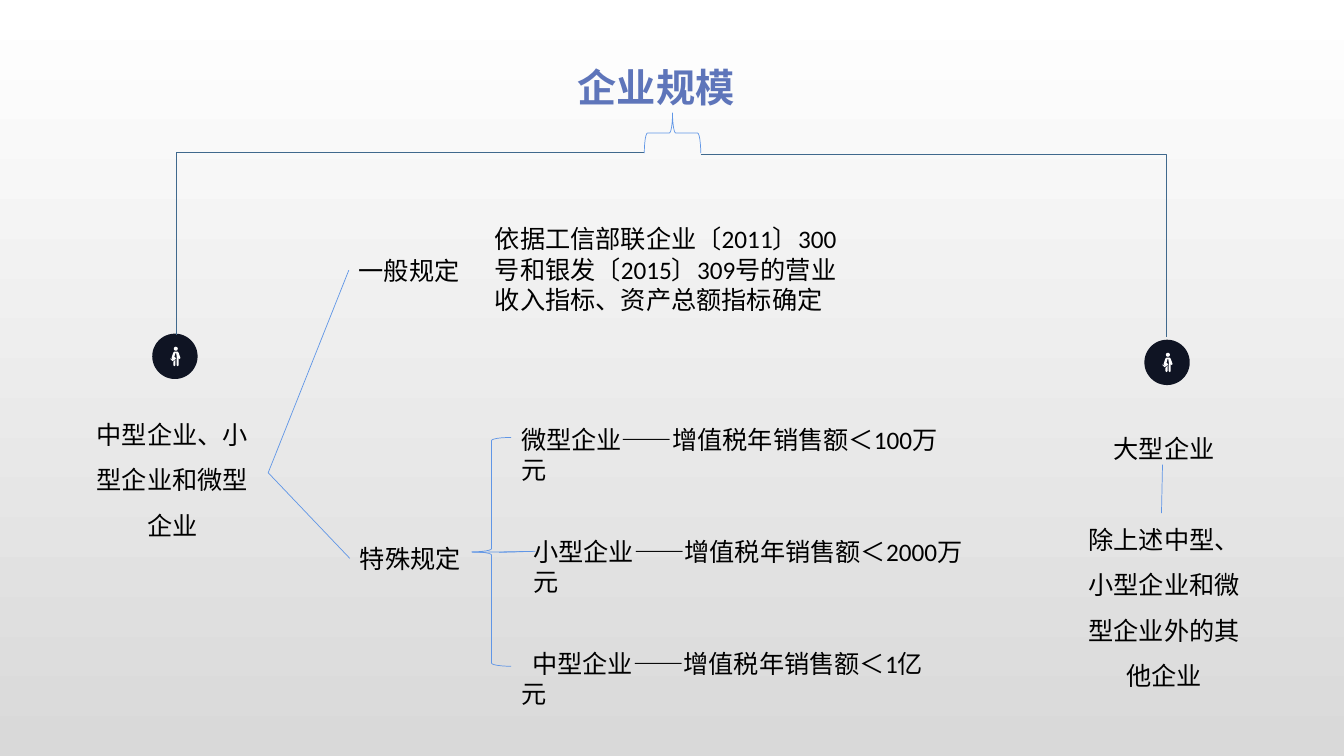
from math import cos, pi, sin

from lxml.etree import SubElement
from pptx import Presentation
from pptx.dml.color import RGBColor
from pptx.enum.shapes import MSO_CONNECTOR as LINK, MSO_SHAPE as SHAPE
from pptx.enum.text import MSO_ANCHOR as ANCHOR, MSO_AUTO_SIZE as AUTO, PP_ALIGN as ALIGN
from pptx.oxml.ns import qn
from pptx.util import Inches, Pt

COLORS = {
    "top": "FFFFFF", "bottom": "D9D9D9", "title": "5E75BA", "text": "000000",
    "badge": "0F1423", "icon": "FFFFFF", "trunk": "40698D", "branch": "6096E6",
}
PERSON = [
    [(50, 130), (50, 183), (40, 193), (30, 183), (30, 150)],
    [(40, 100), (55, 113), (52, 122), (22, 143), (0, 122), (2, 115),
     (18, 130), (32, 122)],
    [(40, 48), (72, 48), (82, 60), (100, 112), (92, 122), (82, 112),
     (82, 183), (72, 193), (62, 183), (62, 120), (64, 105), (58, 63),
     (50, 63), (42, 92), (32, 120), (22, 127), (12, 112), (22, 78), (30, 57)],
    [(54 + 20 * cos(step * pi / 8), 20 + 20 * sin(step * pi / 8)) for step in range(16)],
]


def color(name):
    return RGBColor.from_string(COLORS[name])


class Diagram:
    font, size, line_width = "Calibri", 18, 0.5

    def __init__(self, deck):
        self.page = deck.slides.add_slide(deck.slide_layouts[5])
        fill = self.page.background.fill
        fill.gradient()
        fill.gradient_angle = 270
        for stop, name, position in zip(fill.gradient_stops, ("top", "bottom"), (0, 1)):
            stop.color.rgb = color(name)
            stop.position = position

    def add_span(self, para, words, font=None, size=None, ink="text", bold=False):
        span = para.add_run()
        span.text = words
        span.font.name = font or self.font
        span.font.size = Pt(size or self.size)
        span.font.bold = bold
        span.font.color.rgb = color(ink)

    def title(self, words, left, top, width, height):
        box = self.page.shapes.title
        box.left, box.top, box.width, box.height = map(Inches, (left, top, width, height))
        frame = box.text_frame
        frame.word_wrap = True
        frame.auto_size = AUTO.NONE
        frame.vertical_anchor = ANCHOR.TOP
        frame.paragraphs[0].alignment = ALIGN.LEFT
        self.add_span(frame.paragraphs[0], words, size=28, ink="title", bold=True)

    def text(self, spans, left, top, width, height, spacious=False, gap=0, indent=0):
        box = self.page.shapes.add_textbox(*map(Inches, (left, top, width, height)))
        frame = box.text_frame
        frame.word_wrap = True
        for index, (words, font) in enumerate(spans):
            para = frame.add_paragraph() if index else frame.paragraphs[0]
            if spacious:
                para.alignment = ALIGN.CENTER
                para.line_spacing = 1.5
            if index:
                para.space_before = Pt(gap)
            if indent:
                para._p.get_or_add_pPr().set("indent", str(Inches(indent)))
            self.add_span(para, words, font)
        return box

    def line(self, start, end, ink="branch", bent=False):
        link = self.page.shapes.add_connector(
            LINK.ELBOW if bent else LINK.STRAIGHT, *map(Inches, start + end))
        link.line.color.rgb = color(ink)
        link.line.width = Pt(self.line_width)
        properties = link._element.spPr
        SubElement(properties, qn("a:effectLst"))
        if bent:
            properties.find(qn("a:prstGeom")).set("prst", "bentConnector2")
        return link

    def brace(self, left, top, width, height, rotation=0):
        shape = self.page.shapes.add_shape(
            SHAPE.LEFT_BRACE, *map(Inches, (left, top, width, height)))
        shape.adjustments[0] = 0.08
        shape.rotation = rotation
        shape.shadow.inherit = False
        shape.fill.background()
        shape.line.color.rgb = color("branch")
        shape.line.width = Pt(self.line_width)

    def badge(self, left, top):
        group = self.page.shapes.add_group_shape()
        disc = group.shapes.add_shape(
            SHAPE.OVAL, *map(Inches, (left, top, 0.45, 0.45)))
        outline = group.shapes.build_freeform(*PERSON[0][0], scale=Inches(0.001))
        for index, contour in enumerate(PERSON):
            if index:
                outline.move_to(*contour[0])
            outline.add_line_segments(contour[1:], close=True)
        person = outline.convert_to_shape(Inches(left + 0.18), Inches(top + 0.13))
        for shape, name in ((disc, "badge"), (person, "icon")):
            shape.shadow.inherit = False
            shape.fill.solid()
            shape.fill.fore_color.rgb = color(name)
            shape.line.fill.background()


def main():
    deck = Presentation()
    deck.slide_width, deck.slide_height = Inches(13.33), Inches(7.5)
    diagram = Diagram(deck)
    diagram.title("企业规模", 5.63, 0.58, 1.88, 0.57)

    diagram.badge(1.51, 3.31)
    diagram.badge(11.35, 3.37)
    diagram.line((6.39, 1.51), (1.75, 3.32), "trunk", bent=True)
    diagram.line((6.95, 1.53), (11.57, 3.34), "trunk", bent=True)
    diagram.brace(6.47, 1.04, 0.4, 0.56, rotation=90)

    smaller = diagram.text([("中型企业、小型企业和微型企业", "Noto Sans CJK JP")],
                           0.76, 3.96, 1.9, 1.46, spacious=True)
    diagram.text([("大型企业", "Noto Sans CJK JP"),
                  ("除上述中型、小型企业和微型企业外的其他企业", None)],
                 10.59, 4.1, 1.91, 2.83, spacious=True, gap=32.5)
    diagram.line((11.53, 4.61), (11.52, 5.09))

    for words, left, top in (("一般规定", 3.46, 2.48), ("特殊规定", 3.47, 5.34)):
        rule = diagram.text([(words, None)], left, top, 1.21, 0.4)
        branch = diagram.line((2.66, 4.69), (left, top + 0.2))
        branch.begin_connect(smaller, 3)
        branch.end_connect(rule, 1)

    diagram.text([("依据工信部联企业〔2011〕300号和银发〔2015〕309号"
                   "的营业收入指标、资产总额指标确定", None)], 4.81, 2.17, 3.71, 1.01)

    diagram.brace(4.68, 4.34, 0.39, 2.27)
    for start, end in ((4.95, 5.29), (4.68, 5.31)):
        diagram.line((start, 5.48), (end, 5.47))
    limits = [("微型", "100万", 5.07, 4.53, 0), ("小型", "2000万", 5.19, 4.66, 0),
              ("中型", "1亿", 5.07, 4.41, 0.11)]
    for index, (kind, limit, left, width, indent) in enumerate(limits):
        diagram.text([(f"{kind}企业——增值税年销售额＜{limit}元", None)],
                     left, 4.16 + 1.11 * index, width, 0.4, indent=indent)

    deck.save("out.pptx")


if __name__ == "__main__":
    main()
